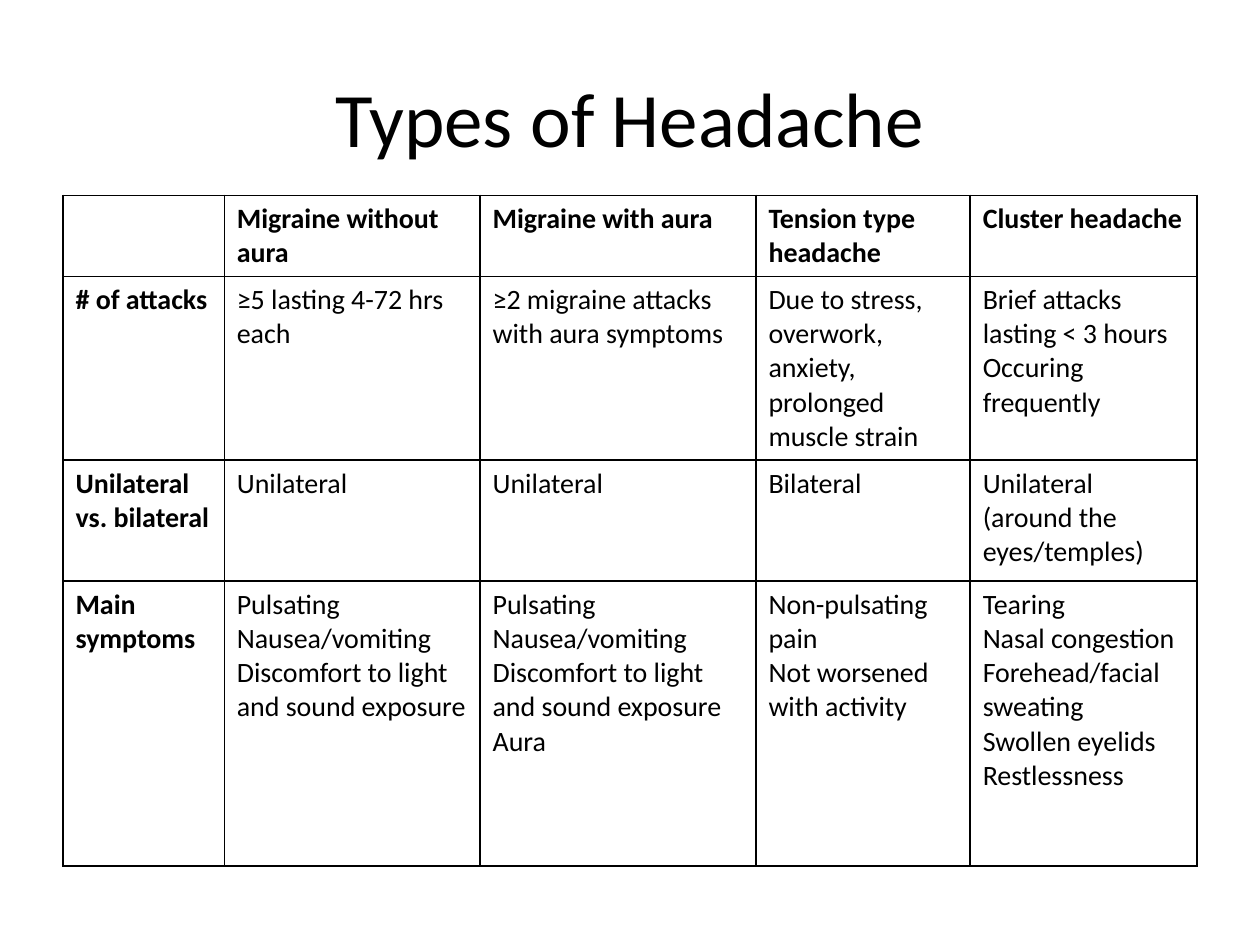
"""Build a slide with a table that compares types of headache."""
from dataclasses import dataclass

from lxml import etree
from pptx import Presentation
from pptx.dml.color import RGBColor
from pptx.enum.text import MSO_ANCHOR, PP_ALIGN
from pptx.oxml.ns import qn
from pptx.util import Inches, Pt

MIDDLE, TOP = MSO_ANCHOR.MIDDLE, MSO_ANCHOR.TOP
CENTER, LEFT = PP_ALIGN.CENTER, PP_ALIGN.LEFT


@dataclass(frozen=True)
class Theme:
    """Colours, font and type sizes."""
    font: str = "Calibri"
    ink: str = "000000"
    title: int = 44
    body: int = 16
    border: int = 1


@dataclass(frozen=True)
class Feature:
    """One labelled row of the comparison."""
    label: str
    values: tuple[str, ...]
    height: float


THEME = Theme()
COLUMN_WIDTHS = (1.28, 2.03, 2.19, 1.7, 1.8)
MIGRAINE = "Pulsating\nNausea/vomiting\nDiscomfort to light and sound exposure"
FEATURES = (
    Feature("", ("Migraine without aura", "Migraine with aura",
                 "Tension type headache", "Cluster headache"), 0.64),
    Feature("# of attacks", (
        "≥5 lasting 4-72 hrs each",
        "≥2 migraine attacks with aura symptoms",
        "Due to stress, overwork, anxiety, prolonged muscle strain",
        "Brief attacks lasting < 3 hours\nOccuring frequently"), 1.43),
    Feature("Unilateral vs. bilateral", (
        "Unilateral", "Unilateral", "Bilateral",
        "Unilateral (around the eyes/temples)"), 0.96),
    Feature("Main symptoms", (
        MIGRAINE,
        MIGRAINE + "\nAura",
        "Non-pulsating pain\nNot worsened with activity",
        "Tearing\nNasal congestion\nForehead/facial sweating\n"
        "Swollen eyelids\nRestlessness"), 2.26),
)


def style_text(tf, size: int, align, bold: bool = False) -> None:
    """Format every paragraph of a text frame."""
    for p in tf.paragraphs:
        p.alignment = align
        p.font.name = THEME.font
        p.font.size = Pt(size)
        p.font.bold = bold
        p.font.color.rgb = RGBColor.from_string(THEME.ink)


def add_borders(cell) -> None:
    """Draw a solid line on each side of a cell."""
    properties = cell._tc.get_or_add_tcPr()
    for index, side in enumerate(("a:lnL", "a:lnR", "a:lnT", "a:lnB")):
        line = etree.Element(qn(side), w=str(Pt(THEME.border)))
        fill = etree.SubElement(line, qn("a:solidFill"))
        etree.SubElement(fill, qn("a:srgbClr"), val=THEME.ink)
        properties.insert(index, line)


def fill_cell(cell, text: str, bold: bool) -> None:
    """Write and format one cell."""
    cell.text = text
    cell.vertical_anchor = TOP
    cell.margin_left = cell.margin_right = Inches(0.1)
    cell.margin_top = cell.margin_bottom = Inches(0.05)
    cell.fill.background()
    style_text(cell.text_frame, THEME.body, LEFT, bold)
    add_borders(cell)


def add_title(s, text: str) -> None:
    """Fill and place the title placeholder."""
    sp = s.shapes.title
    sp.left, sp.top, sp.width, sp.height = map(Inches, (0.5, 0.3, 9, 1.25))
    tf = sp.text_frame
    tf.text = text
    tf.vertical_anchor = MIDDLE
    style_text(tf, THEME.title, CENTER)


def add_comparison(s, features: tuple[Feature, ...]) -> None:
    """Add the table of headache types."""
    height = sum(feature.height for feature in features)
    table = s.shapes.add_table(
        len(features), len(COLUMN_WIDTHS), Inches(0.5), Inches(1.55),
        Inches(sum(COLUMN_WIDTHS)), Inches(height)).table
    table.horz_banding = False
    table.first_row = False
    for column, width in zip(table.columns, COLUMN_WIDTHS):
        column.width = Inches(width)
    for i, (row, feature) in enumerate(zip(table.rows, features)):
        row.height = Inches(feature.height)
        for j, text in enumerate((feature.label, *feature.values)):
            fill_cell(table.cell(i, j), text, bold=i == 0 or j == 0)


def main() -> None:
    """Build and save the presentation."""
    prs = Presentation()
    prs.slide_width, prs.slide_height = Inches(10), Inches(7.5)
    s = prs.slides.add_slide(prs.slide_layouts.get_by_name("Title Only"))
    add_title(s, "Types of Headache")
    add_comparison(s, FEATURES)
    prs.save("out.pptx")


if __name__ == "__main__":
    main()
